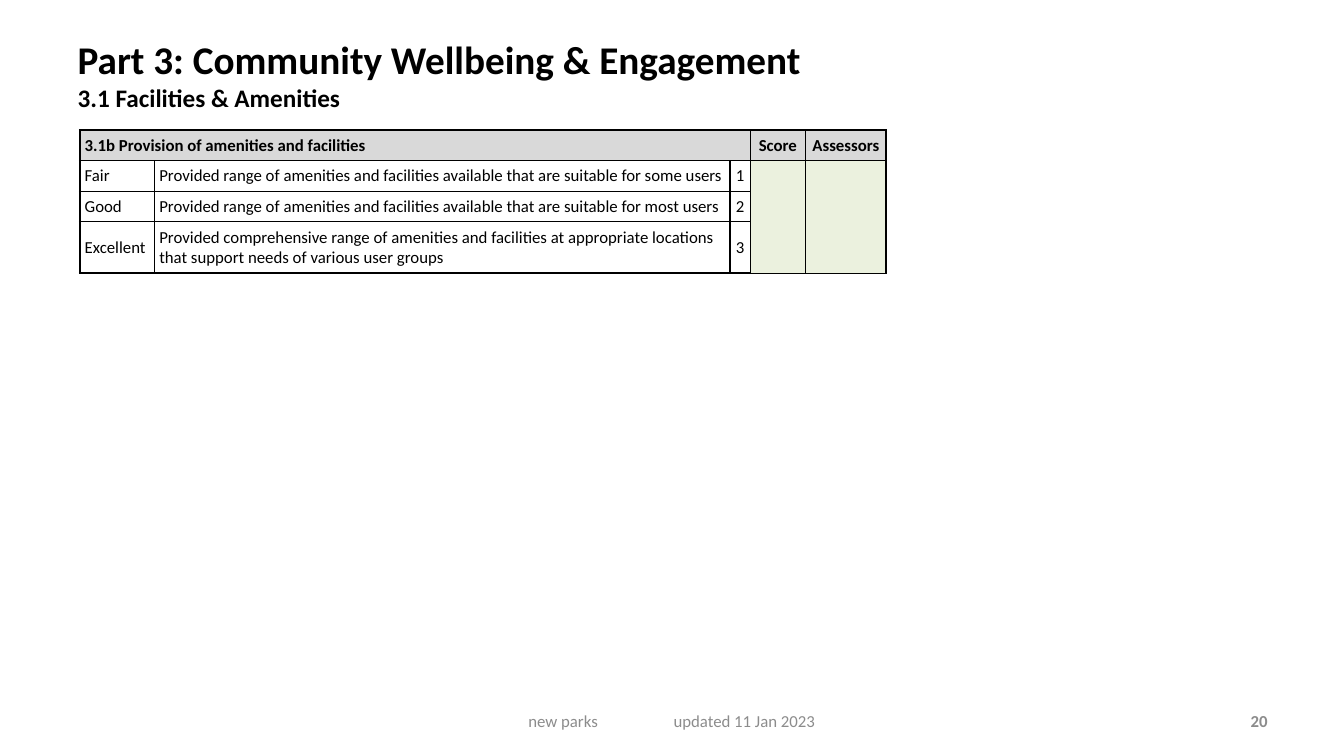
from lxml import etree
from pptx import Presentation
from pptx.dml.color import RGBColor
from pptx.enum.text import MSO_ANCHOR, MSO_AUTO_SIZE, PP_ALIGN
from pptx.oxml.ns import qn
from pptx.util import Inches, Pt

LEFT, CENTER, RIGHT = PP_ALIGN.LEFT, PP_ALIGN.CENTER, PP_ALIGN.RIGHT
TOP, MIDDLE = MSO_ANCHOR.TOP, MSO_ANCHOR.MIDDLE
NO_FIT = MSO_AUTO_SIZE.NONE
TITLE_ONLY = 5

UNIT = Inches(1) / 12
BLACK, WHITE, GRAY = "000000", "FFFFFF", "8C8C8C"
HEADER_FILL, SCORE_FILL = "D9D9D9", "EBF1DE"
INNER_LINE, OUTER_LINE = 1, 1.5

TITLE_BOX = (8.04, 3.6, 124.32, 11.88)
RUBRIC_BOX = (9.48, 15.48, 96, 16.92)
FOOTER_BOX = (54.72, 83.4, 50.64, 4.8)
NUMBER_BOX = (114.72, 83.4, 37.32, 4.8)

COLUMN_SHARES = (74, 571, 20, 55, 80)
ROW_SHARES = (30, 30, 30, 51)
RUBRIC = (
    ("3.1b Provision of amenities and facilities", "", "", "Score", "Assessors"),
    ("Fair", "Provided range of amenities and facilities available that are suitable for some users", "1", "", ""),
    ("Good", "Provided range of amenities and facilities available that are suitable for most users", "2", "", ""),
    ("Excellent", "Provided comprehensive range of amenities and facilities at appropriate locations "
     "that support needs of various user groups", "3", "", ""),
)


def color(value):
    """Turn a hex string into a colour."""
    return RGBColor.from_string(value)


def grid(*cells):
    """Convert grid cells of a twelfth of an inch into lengths."""
    return [round(cell * UNIT) for cell in cells]


def set_all(target, formats):
    """Set every attribute listed in a dict of format values."""
    for key, value in formats.items():
        setattr(target, key, value)


def style(font, size, hue, bold=False):
    """Apply the slide's typeface to a font."""
    set_all(font, {"name": "Calibri", "size": Pt(size), "bold": bold})
    font.color.rgb = color(hue)


def add_title(slide, box):
    """Fill the title placeholder with the part and section headings."""
    title = slide.shapes.title
    set_all(title, dict(zip(("left", "top", "width", "height"), grid(*box))))
    set_all(title.text_frame, {"vertical_anchor": TOP, "auto_size": NO_FIT, "word_wrap": True})
    heading = title.text_frame.paragraphs[0]
    heading.alignment = LEFT
    part = heading.add_run()
    part.text = "Part 3: Community Wellbeing & Engagement"
    style(part.font, 28, BLACK, True)
    heading.add_line_break()
    section = heading.add_run()
    section.text = "3.1 Facilities & Amenities"
    style(section.font, 18, BLACK, True)


def add_borders(cell, row, column):
    """Draw the cell edges, heavier on the outside of the table."""
    outside = {
        "a:lnL": column == 0,
        "a:lnR": column == len(COLUMN_SHARES) - 1,
        "a:lnT": row == 0,
        "a:lnB": row == len(ROW_SHARES) - 1,
    }
    properties = cell._tc.get_or_add_tcPr()
    for position, (edge, is_outer) in enumerate(outside.items()):
        width = Pt(OUTER_LINE if is_outer else INNER_LINE)
        line = etree.Element(qn(edge), w=str(width))
        fill = etree.SubElement(line, qn("a:solidFill"))
        etree.SubElement(fill, qn("a:srgbClr"), val=BLACK)
        properties.insert(position, line)


def format_cell(cell, row, column, text):
    """Write one rubric cell with its fill, font and borders."""
    margins = ("margin_left", "margin_right", "margin_top", "margin_bottom")
    set_all(cell, dict.fromkeys(margins, Inches(0.05)))
    cell.vertical_anchor = MIDDLE
    cell.text = text
    entry = cell.text_frame.paragraphs[0]
    entry.alignment = CENTER if column >= 2 else LEFT
    style(entry.font, 12, BLACK, row == 0)
    for run in entry.runs:
        style(run.font, 12, BLACK, row == 0)
    cell.fill.solid()
    body_fill = SCORE_FILL if column >= 3 else WHITE
    cell.fill.fore_color.rgb = color(HEADER_FILL if row == 0 else body_fill)
    add_borders(cell, row, column)


def add_rubric(slide, box):
    """Place the scoring table in its box."""
    left, top, width, height = grid(*box)
    rubric = slide.shapes.add_table(len(ROW_SHARES), len(COLUMN_SHARES), left, top, width, height).table
    set_all(rubric, {"first_row": False, "horz_banding": False})
    for column, share in zip(rubric.columns, COLUMN_SHARES):
        column.width = round(width * share / sum(COLUMN_SHARES))
    for row, share in zip(rubric.rows, ROW_SHARES):
        row.height = round(height * share / sum(ROW_SHARES))
    for row, entries in enumerate(RUBRIC):
        for column, text in enumerate(entries):
            format_cell(rubric.cell(row, column), row, column, text)
    rubric.cell(0, 0).merge(rubric.cell(0, 2))
    for column in (3, 4):
        rubric.cell(1, column).merge(rubric.cell(3, column))


def add_note(slide, box, text, alignment, bold=False, indent=1.2, tab=None):
    """Place one grey line at the foot of the slide."""
    note = slide.shapes.add_textbox(*grid(*box)).text_frame
    set_all(note, {"word_wrap": True, "vertical_anchor": MIDDLE, "margin_left": grid(indent)[0]})
    line = note.paragraphs[0]
    line.alignment = alignment
    if tab:
        stops = etree.SubElement(line._p.get_or_add_pPr(), qn("a:tabLst"))
        etree.SubElement(stops, qn("a:tab"), pos=str(grid(tab)[0]), algn="l")
    run = line.add_run()
    run.text = text
    style(run.font, 12, GRAY, bold)


def main():
    """Build and save the slide."""
    deck = Presentation()
    set_all(deck, {"slide_width": Inches(13.33), "slide_height": Inches(7.5)})
    slide = deck.slides.add_slide(deck.slide_layouts[TITLE_ONLY])
    add_title(slide, TITLE_BOX)
    add_rubric(slide, RUBRIC_BOX)
    add_note(slide, FOOTER_BOX, "new parks\tupdated 11 Jan 2023", LEFT, indent=8.16, tab=17.28)
    add_note(slide, NUMBER_BOX, "20", RIGHT, bold=True)
    deck.save("out.pptx")


if __name__ == "__main__":
    main()
